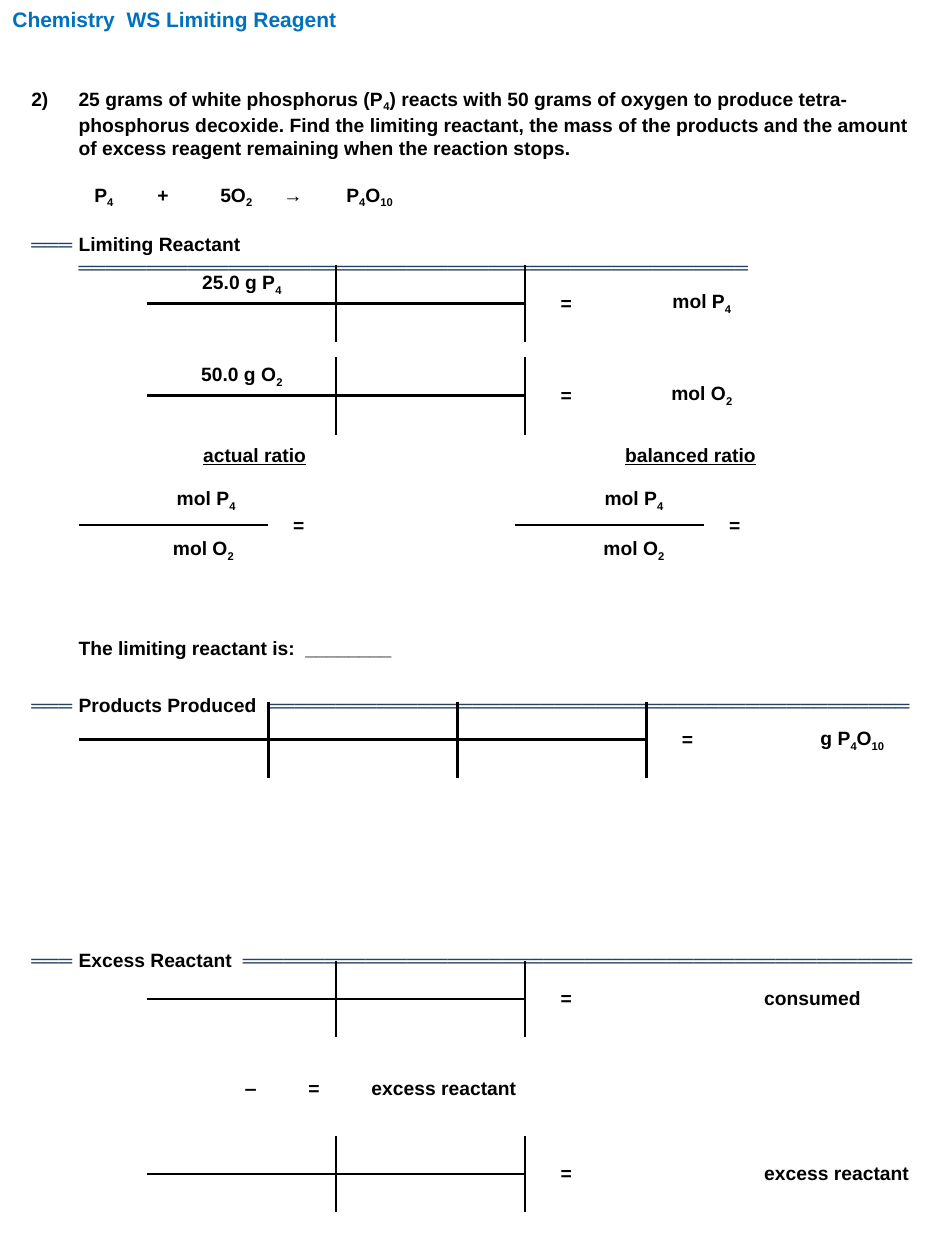
"""Build a one-page chemistry worksheet on limiting reagents."""
from lxml import etree
from pptx import Presentation
from pptx.dml.color import RGBColor
from pptx.enum.text import MSO_ANCHOR, PP_ALIGN
from pptx.oxml.ns import qn
from pptx.util import Pt

CENTER, LEFT = PP_ALIGN.CENTER, PP_ALIGN.LEFT
TOP, MIDDLE = MSO_ANCHOR.TOP, MSO_ANCHOR.MIDDLE
BLACK = RGBColor(0x00, 0x00, 0x00)
BLUE = RGBColor(0x00, 0x70, 0xC0)
NAVY = RGBColor(0x25, 0x40, 0x61)
NO_STYLE = "{2D5ABB26-0587-4C30-8999-92F81FD0307C}"
HANG = 27
FACTOR, EQUALS = 108, 46.8
ROW, RATIO_ROW = 21.6, 28.8


def add_text(paragraph, text, size=11, color=BLACK, bold=True, underline=False):
    for index, part in enumerate(text.split("~")):
        if not part:
            continue
        run = paragraph.add_run()
        run.text = part
        font = run.font
        font.name, font.size, font.bold = "Arial", Pt(size), bold
        font.color.rgb = color
        if underline:
            font.underline = True
        if index % 2:
            font._element.set("baseline", "-25000")


def set_indent(paragraph, margin, first_line, tabs=()):
    properties = paragraph._p.get_or_add_pPr()
    properties.set("marL", str(Pt(margin)))
    properties.set("indent", str(Pt(first_line)))
    if tabs:
        tab_list = etree.SubElement(properties, qn("a:tabLst"))
        for position in tabs:
            etree.SubElement(tab_list, qn("a:tab"), pos=str(Pt(position)), algn="l")


class Worksheet:
    def __init__(self, slide):
        self.slide = slide
        self.line_color, self.line_width = BLACK, 1.5

    def text_frame(self, left, top, width, height, anchor=TOP):
        box = self.slide.shapes.add_textbox(Pt(left), Pt(top), Pt(width), Pt(height))
        frame = box.text_frame
        frame.word_wrap = True
        frame.vertical_anchor = anchor
        return frame

    def border(self, cell, sides):
        properties = cell._tc.get_or_add_tcPr()
        for side in sides:
            line = etree.SubElement(properties, qn(f"a:ln{side}"), w=str(Pt(self.line_width)))
            fill = etree.SubElement(line, qn("a:solidFill"))
            etree.SubElement(fill, qn("a:srgbClr"), val=str(self.line_color))

    def table(self, left, top, widths, heights, ruled, first=0):
        frame = self.slide.shapes.add_table(
            len(heights), len(widths), Pt(left), Pt(top), Pt(sum(widths)), Pt(sum(heights)))
        table = frame.table
        table.first_row = table.horz_banding = False
        table._tbl.tblPr.find(qn("a:tableStyleId")).text = NO_STYLE
        for column, width in zip(table.columns, widths):
            column.width = Pt(width)
        for row, height in zip(table.rows, heights):
            row.height = Pt(height)
        for r in range(len(heights)):
            for c in range(len(widths)):
                cell = table.cell(r, c)
                if r >= first and c < ruled:
                    sides = "L" * (c > 0) + "R" * (c < ruled - 1)
                    self.border(cell, sides + ("B" if r == first else "T"))
                cell.fill.background()
                cell.vertical_anchor = MIDDLE
                etree.SubElement(cell.text_frame.paragraphs[0]._p, qn("a:endParaRPr"), sz="1100")
        for c in range(ruled, len(widths)):
            table.cell(first, c).merge(table.cell(first + 1, c))
        return table

    def fill_cell(self, cell, text, shift=0, first_line=0, align=CENTER, **style):
        paragraph = cell.text_frame.paragraphs[0]
        paragraph.alignment = align
        if shift:
            cell.margin_left = Pt(7.2 + shift)
        if first_line:
            set_indent(paragraph, 0, first_line)
        add_text(paragraph, text, **style)

    def conversion(self, left, top, result, given="", factors=2, result_width=108, **layout):
        widths = [FACTOR] * factors + [EQUALS, result_width]
        table = self.table(left, top, widths, [ROW, ROW], factors)
        if given:
            self.fill_cell(table.cell(0, 0), given)
        self.fill_cell(table.cell(0, factors), "=")
        self.fill_cell(table.cell(0, factors + 1), result, **layout)

    def ratio(self, left, top, heading, shifts):
        table = self.table(left, top, [FACTOR, 34.6, 57.6], [ROW, RATIO_ROW, RATIO_ROW], 1, first=1)
        table.cell(0, 0).merge(table.cell(0, 2))
        self.fill_cell(table.cell(0, 0), heading, underline=True)
        self.fill_cell(table.cell(1, 1), "=")
        for row, (substance, shift) in enumerate(zip(("mol P~4~", "mol O~2~"), shifts), 1):
            self.fill_cell(table.cell(row, 0), substance, shift=shift)

    def problem(self):
        frame = self.text_frame(10.8, 46.1, 518.4, 643)
        gaps = (0, 13.4, 13.4, 204.2, 19.6, 132.2)
        paragraphs = [frame.paragraphs[0]] + [frame.add_paragraph() for _ in gaps[1:]]
        for paragraph, gap in zip(paragraphs, gaps):
            paragraph.space_before = Pt(gap)
            set_indent(paragraph, HANG, -HANG)
        question, equation, limiting, answer, products, excess = paragraphs
        add_text(question, "2)\t25 grams of white phosphorus (P~4~) reacts with 50 grams of oxygen "
                 "to produce tetra-phosphorus decoxide. Find the limiting reactant, the mass of the "
                 "products and the amount of excess reagent remaining when the reaction stops.")
        set_indent(equation, 0, 0, (HANG, 50, 72, 112.5, 138))
        add_text(equation, "\tP~4~\t+\t5O~2~\t→\tP~4~O~10~")
        add_text(answer, "\tThe limiting reactant is:  ________")
        for paragraph, heading, bars in ((limiting, "Limiting Reactant ", 49),
                                         (products, "Products Produced  ", 47),
                                         (excess, "Excess Reactant  ", 49)):
            add_text(paragraph, "═══\t", color=NAVY, bold=False)
            add_text(paragraph, heading)
            add_text(paragraph, "═" * bars, color=NAVY, bold=False)


def main():
    deck = Presentation()
    deck.slide_width, deck.slide_height = Pt(540), Pt(720)
    sheet = Worksheet(deck.slides.add_slide(deck.slide_layouts[6]))
    sheet.problem()
    sheet.conversion(84.2, 151.2, "mol P~4~", given="25.0 g P~4~")
    sheet.ratio(45.4, 249.8, "actual ratio", (36.7, 33.6))
    sheet.ratio(294.5, 249.8, "balanced ratio", (27.5, 27.5))
    sheet.conversion(45.4, 401, "g P~4~O~10~", factors=3, shift=33.6)
    sheet.conversion(84.2, 203.8, "mol O~2~", given="50.0 g O~2~")
    for top, result in ((649.4, "excess reactant"), (549.4, "consumed")):
        sheet.conversion(84.2, top, result, result_width=180, first_line=82.5, align=LEFT)
    difference = sheet.text_frame(97.2, 599.8, 440, 43.2, MIDDLE).paragraphs[0]
    set_indent(difference, 0, 0, (85.5, 220.5, 338))
    add_text(difference, "\t‒\t=\texcess reactant")
    title = sheet.text_frame(0, 0, 409.7, 25.2).paragraphs[0]
    add_text(title, "Chemistry  WS Limiting Reagent", size=12, color=BLUE)
    deck.save("out.pptx")


if __name__ == "__main__":
    main()
